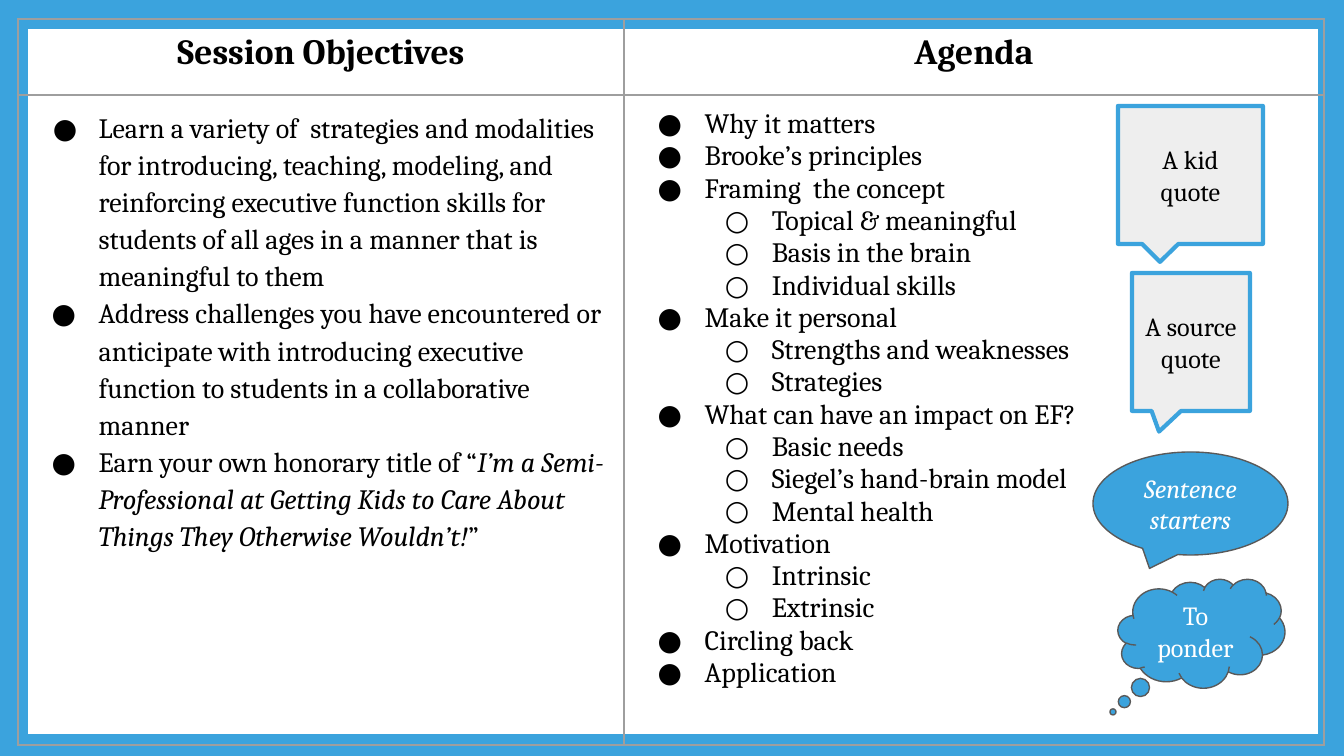
from lxml import etree
from pptx import Presentation
from pptx import util as u
from pptx.dml.color import RGBColor
from pptx.enum import shapes, text
from pptx.oxml.ns import qn

PX = 9144000 / 1344
FONT = "Cambria"
HUES = {"blue": "3BA3DD", "grey": "EEEEEE", "rule": "9E9E9E",
        "edge": "595959", "black": "000000", "white": "FFFFFF"}
KIND = shapes.MSO_SHAPE
MID = text.PP_ALIGN.CENTER


def px(*nums):
    return [u.Emu(round(n * PX)) for n in nums]


def write(para, words, hue, **format):
    run = para.add_run()
    run.text = words
    run.font.color.rgb = RGBColor.from_string(HUES[hue])
    for key, val in {"name": FONT, **format}.items():
        setattr(run.font, key, val)


deck = Presentation()
deck.slide_width, deck.slide_height = px(1344, 756)
slide = deck.slides.add_slide(deck.slide_layouts[6])

# Blue frame around the slide
frame = slide.shapes.add_shape(KIND.RECTANGLE, *px(11, 12, 1324, 739))
frame.shadow.inherit = False
frame.fill.background()
frame.line.color.rgb = RGBColor.from_string(HUES["blue"])
frame.line.width = u.Pt(18)

# Table grid: a heading row above a body row
table = slide.shapes.add_table(2, 2, *px(18, 19, 1306, 726)).table
table.first_row = table.horz_banding = False
for col, wide in zip(table.columns, px(606, 700)):
    col.width = wide
for row, high in zip(table.rows, px(76, 650)):
    row.height = high

for cell in table.iter_cells():
    cell.fill.background()
    for side in ("left", "right", "top", "bottom"):
        setattr(cell, f"margin_{side}", u.Inches(0.1))
    props = cell._tc.get_or_add_tcPr()
    for spot, tag in enumerate(("a:lnL", "a:lnR", "a:lnT", "a:lnB")):
        line = etree.Element(qn(tag), w=str(u.Pt(0.75)))
        fill = etree.SubElement(line, qn("a:solidFill"))
        etree.SubElement(fill, qn("a:srgbClr"), val=HUES["rule"])
        props.insert(spot, line)

# Headings
for col, head in enumerate(("Session Objectives", "Agenda")):
    para = table.cell(0, col).text_frame.paragraphs[0]
    para.alignment = MID
    write(para, head, "black", size=u.Pt(19), bold=True)

# Lists: each item is a level and its runs, every second run in italics
goals = [
    (0, ["Learn a variety of  strategies and modalities for introducing, "
         "teaching, modeling, and reinforcing executive function skills for "
         "students of all ages in a manner that is meaningful to them"]),
    (0, ["Address challenges you have encountered or anticipate with "
         "introducing executive function to students in a collaborative manner"]),
    (0, ["Earn your own honorary title of “",
         "I’m a Semi-Professional at Getting Kids to Care About Things They "
         "Otherwise Wouldn’t!", "”"]),
]
topics = [
    ("Why it matters", []),
    ("Brooke’s principles", []),
    ("Framing  the concept",
     ["Topical & meaningful", "Basis in the brain", "Individual skills"]),
    ("Make it personal", ["Strengths and weaknesses", "Strategies"]),
    ("What can have an impact on EF?",
     ["Basic needs", "Siegel’s hand-brain model", "Mental health"]),
    ("Motivation", ["Intrinsic", "Extrinsic"]),
    ("Circling back", []),
    ("Application", []),
]
plan = []
for topic, points in topics:
    plan += [(0, [topic])] + [(1, [point]) for point in points]

for col, (items, gap) in enumerate(((goals, 1.15), (plan, 1.0))):
    body = table.cell(1, col).text_frame
    for num, (level, runs) in enumerate(items):
        para = body.add_paragraph() if num else body.paragraphs[0]
        para.level = level
        para.line_spacing = gap
        props = para._p.get_or_add_pPr()
        first = (col, num) == (0, 0)
        props.set("marL", str(u.Inches(0.5 + 0.5 * level)))
        props.set("indent", str(u.Inches(-0.34 if first else -0.35)))
        hue = etree.SubElement(props, qn("a:buClr"))
        etree.SubElement(hue, qn("a:srgbClr"), val=HUES["black"])
        etree.SubElement(props, qn("a:buFont"), typeface=FONT)
        etree.SubElement(props, qn("a:buChar"), char="●○"[level])
        for spot, words in enumerate(runs):
            write(para, words, "black", size=u.Pt(15), italic=spot % 2 == 1)

# Callouts that explain the symbols
pale = ("grey", "blue", 2.25, "black")
deep = ("blue", "edge", 0.75, "white")
calls = [
    ("A kid quote", KIND.ROUNDED_RECTANGULAR_CALLOUT, (1118, 106, 145, 138),
     (-0.21, 0.63, 0), pale, False),
    ("A source quote", KIND.RECTANGULAR_CALLOUT, (1132, 273, 118, 138),
     (-0.27, 0.65), pale, False),
    ("Sentence starters", KIND.OVAL_CALLOUT, (1093, 452, 195, 103),
     (-0.21, 0.63), deep, True),
    ("To ponder", KIND.CLOUD_CALLOUT, (1118, 579, 167, 109),
     (-0.53, 0.72), deep, False),
]
for words, kind, box, tail, (fill, edge, width, ink), slant in calls:
    call = slide.shapes.add_shape(kind, *px(*box))
    call.shadow.inherit = False
    for spot, val in enumerate(tail):
        call.adjustments[spot] = val
    call.fill.solid()
    call.fill.fore_color.rgb = RGBColor.from_string(HUES[fill])
    call.line.color.rgb = RGBColor.from_string(HUES[edge])
    call.line.width = u.Pt(width)
    body = call.text_frame
    body.word_wrap = True
    body.vertical_anchor = text.MSO_ANCHOR.MIDDLE
    for side in ("left", "right", "top", "bottom"):
        setattr(body, f"margin_{side}", u.Inches(0.1))
    para = body.paragraphs[0]
    para.alignment = MID
    write(para, words, ink, size=u.Pt(14), italic=slant)

deck.save("out.pptx")
